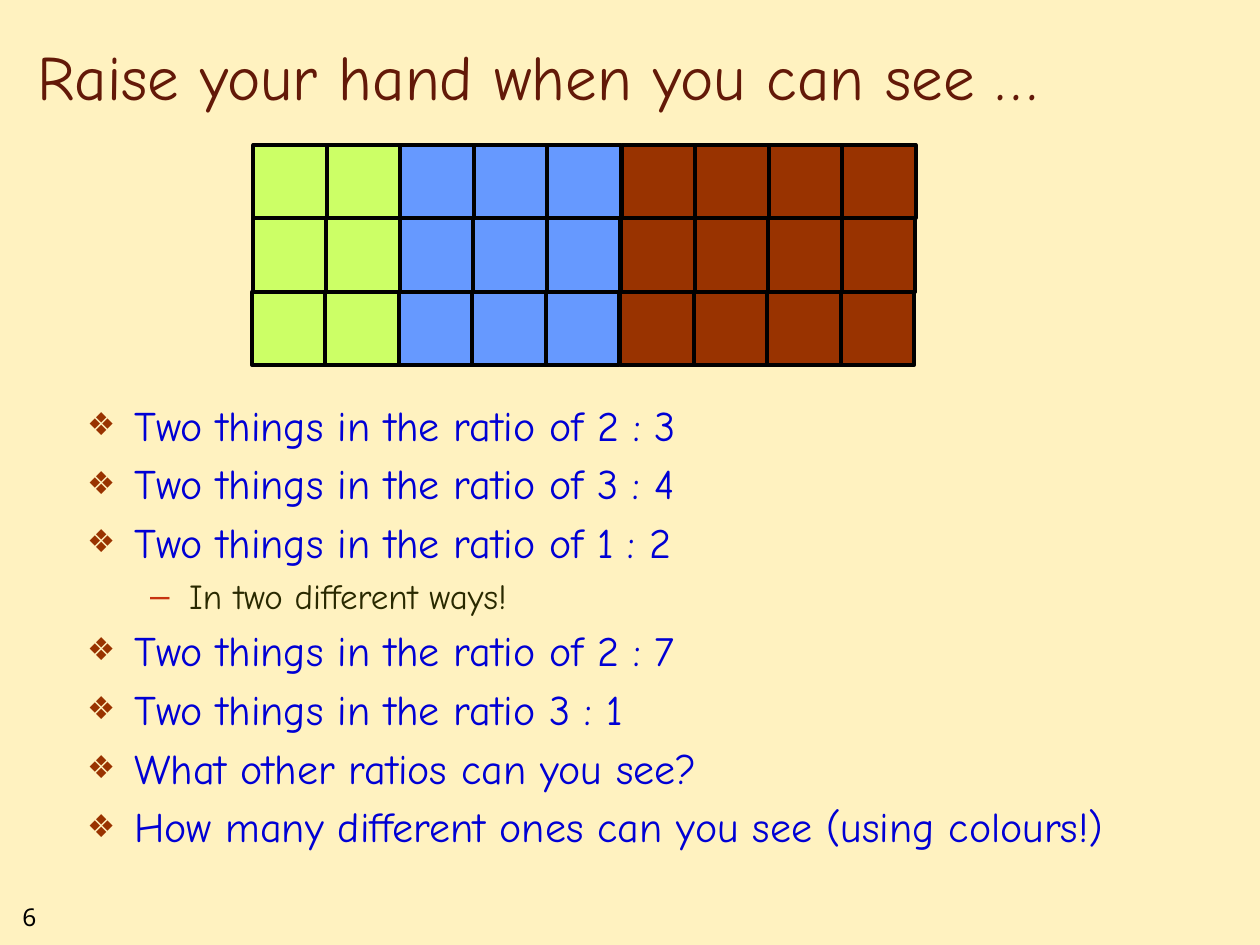
from lxml.etree import SubElement
from pptx import Presentation
from pptx.dml.color import RGBColor
from pptx.enum.shapes import MSO_SHAPE as Shape
from pptx.enum.text import MSO_ANCHOR as Anchor, MSO_AUTO_SIZE as AutoSize, PP_ALIGN as Align
from pptx.oxml.ns import qn
from pptx.util import Cm, Pt

COLOURS = {
    "background": "FFF2C0", "title": "631908", "body": "0000D4",
    "detail": "292900", "bullet": "993300", "dash": "C6330F",
    "black": "000000", "green": "CCFF66", "blue": "6699FF", "brown": "993300",
}
FONT = "Comic Neue"
CELL = 1.48
ROW_COLOURS = ["green"] * 2 + ["blue"] * 3 + ["brown"] * 4
BROWN_GAP = 0.03

# Text and outline level of each list entry
QUESTIONS = [
    ("Two things in the ratio of 2 : 3", 0),
    ("Two things in the ratio of 3 : 4", 0),
    ("Two things in the ratio of 1 : 2", 0),
    ("In two different ways!", 1),
    ("Two things in the ratio of 2 : 7", 0),
    ("Two things in the ratio 3 : 1", 0),
    ("What other ratios can you see?", 0),
    ("How many different ones can you see (using colours!)", 0),
]
LEVELS = [
    dict(text=dict(size=24, colour="body"),
         bullet=dict(char="❖", colour="bullet", percent=75, margin=0.95, hang=0.95)),
    dict(text=dict(size=20, colour="detail"),
         bullet=dict(char="–", colour="dash", percent=100, margin=2.06, hang=0.79)),
]


def rgb(name):
    return RGBColor.from_string(COLOURS[name])


def place(shape, left, top, width, height):
    shape.left, shape.top = Cm(left), Cm(top)
    shape.width, shape.height = Cm(width), Cm(height)


def write(paragraph, text, size=24, colour="body", font=FONT):
    paragraph.alignment = Align.LEFT
    run = paragraph.add_run()
    run.text = text
    run.font.size = Pt(size)
    run.font.name = font
    run.font.color.rgb = rgb(colour)


def set_bullet(paragraph, char, colour, percent, margin, hang):
    props = paragraph._p.get_or_add_pPr()
    props.set("marL", str(Cm(margin)))
    props.set("indent", str(-Cm(hang)))
    bullet_colour = SubElement(props, qn("a:buClr"))
    SubElement(bullet_colour, qn("a:srgbClr"), val=COLOURS[colour])
    SubElement(props, qn("a:buSzPct"), val=str(percent * 1000))
    SubElement(props, qn("a:buChar"), char=char)


def fill_title(title, text):
    place(title, 0.51, 0.33, 22.4, 2.08)
    frame = title.text_frame
    frame.vertical_anchor = Anchor.BOTTOM
    frame.auto_size = AutoSize.NONE
    write(frame.paragraphs[0], text, size=36, colour="title")


def fill_list(body, entries):
    place(body, 1.5, 7.92, 22.4, 10.01)
    frame = body.text_frame
    frame.auto_size = AutoSize.NONE
    for index, (text, level) in enumerate(entries):
        paragraph = frame.add_paragraph() if index else frame.paragraphs[0]
        paragraph.level = level
        write(paragraph, text, **LEVELS[level]["text"])
        set_bullet(paragraph, **LEVELS[level]["bullet"])


def add_row(slide, left, top):
    row = slide.shapes.add_group_shape()
    for column, colour in enumerate(ROW_COLOURS):
        gap = BROWN_GAP if colour == "brown" else 0
        square = row.shapes.add_shape(
            Shape.RECTANGLE, Cm(left + column * CELL + gap), Cm(top), Cm(CELL), Cm(CELL))
        square.shadow.inherit = False
        square.fill.solid()
        square.fill.fore_color.rgb = rgb(colour)
        square.line.color.rgb = rgb("black")
        square.line.width = Pt(2.25)


def add_page_number(slide, number):
    box = slide.shapes.add_textbox(Cm(0.2), Cm(18.06), Cm(1.9), Cm(0.86))
    box.text_frame.word_wrap = True
    write(box.text_frame.paragraphs[0], number, size=14, colour="black", font="Noto Sans")


def main():
    deck = Presentation()
    deck.slide_width, deck.slide_height = Cm(25.4), Cm(19.05)
    slide = deck.slides.add_slide(deck.slide_layouts[1])
    slide.background.fill.solid()
    slide.background.fill.fore_color.rgb = rgb("background")

    # Heading and list
    fill_title(slide.shapes.title, "Raise your hand when you can see …")
    fill_list(slide.placeholders[1], QUESTIONS)

    # Coloured grid, one group per row
    for index, left in enumerate([5.11, 5.1, 5.08]):
        add_row(slide, left, 2.92 + index * CELL)

    add_page_number(slide, "6")
    deck.save("out.pptx")


if __name__ == "__main__":
    main()
